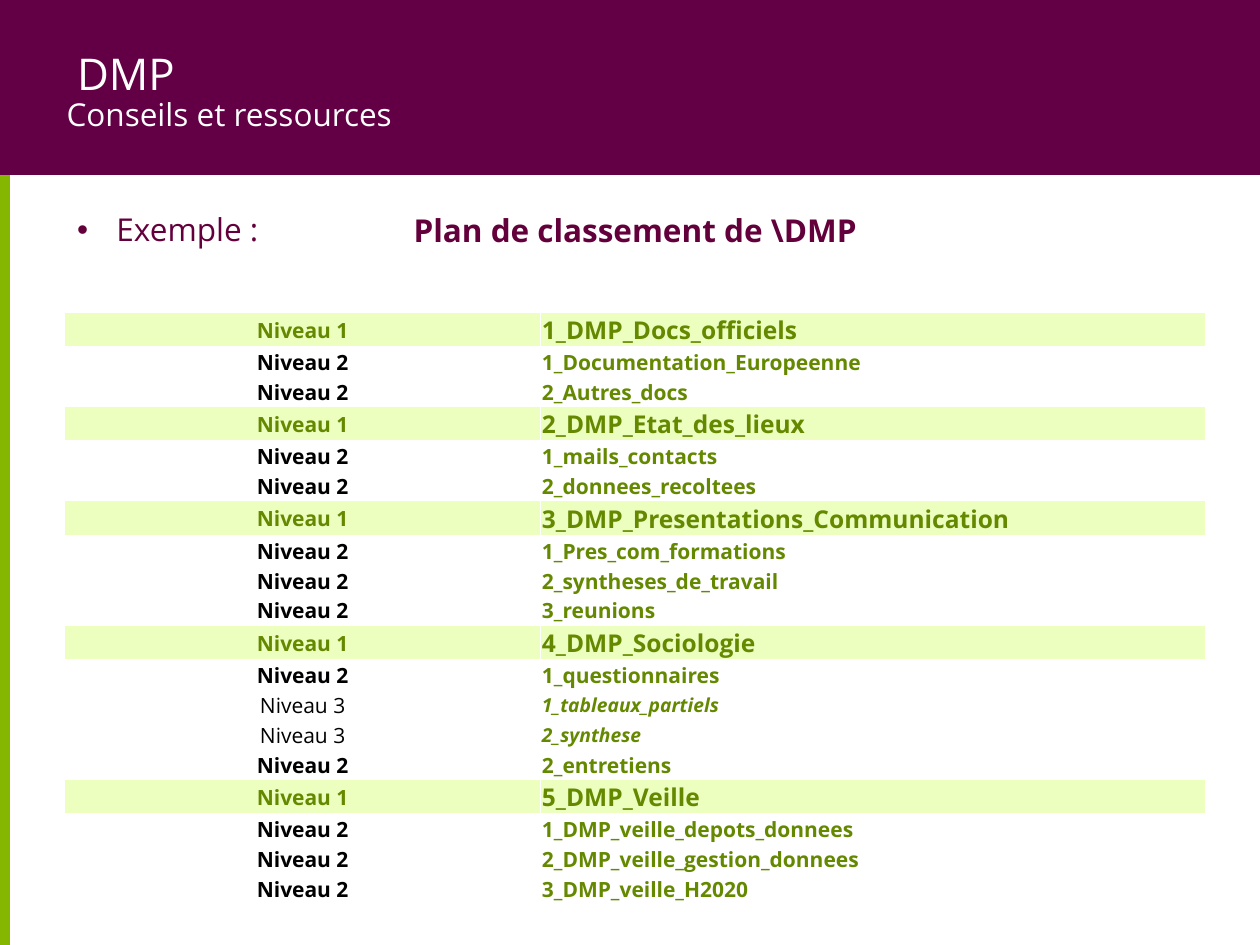
from dataclasses import dataclass

from lxml import etree
from pptx import Presentation
from pptx.dml.color import RGBColor
from pptx.enum.shapes import MSO_CONNECTOR, MSO_SHAPE
from pptx.enum.text import MSO_ANCHOR, MSO_AUTO_SIZE, PP_ALIGN
from pptx.oxml.ns import qn
from pptx.util import Pt

RECTANGLE = MSO_SHAPE.RECTANGLE
STRAIGHT = MSO_CONNECTOR.STRAIGHT
MIDDLE, TOP = MSO_ANCHOR.MIDDLE, MSO_ANCHOR.TOP
LEFT, CENTER = PP_ALIGN.LEFT, PP_ALIGN.CENTER
FIT_SHAPE, FIT_NONE = MSO_AUTO_SIZE.SHAPE_TO_FIT_TEXT, MSO_AUTO_SIZE.NONE


@dataclass(frozen=True)
class Theme:
    font: str = "Open Sans"
    plum: str = "630045"
    plum_text: str = "63003C"
    green: str = "86B700"
    green_text: str = "648900"
    pale_green: str = "EDFFBE"
    white: str = "FFFFFF"
    black: str = "000000"
    title: float = 25
    heading: float = 18
    folder: float = 14
    body: float = 12
    small: float = 11


THEME = Theme()
SLIDE_WIDTH, SLIDE_HEIGHT = 720, 540
BANNER_HEIGHT = 100
TABLE_TOP = 116.64
COLUMN_WIDTHS = (272, 380)
HEADER_HEIGHTS = (28.8, 32.8)
LEVEL_HEIGHTS = {1: 18.72, 2: 15.84, 3: 15.84}
FOLDER_SIZES = {1: THEME.folder, 2: THEME.body, 3: THEME.small}

# Level and name of each folder, in filing order
FOLDERS = [
    (1, "1_DMP_Docs_officiels"),
    (2, "1_Documentation_Europeenne"),
    (2, "2_Autres_docs"),
    (1, "2_DMP_Etat_des_lieux"),
    (2, "1_mails_contacts"),
    (2, "2_donnees_recoltees"),
    (1, "3_DMP_Presentations_Communication"),
    (2, "1_Pres_com_formations"),
    (2, "2_syntheses_de_travail"),
    (2, "3_reunions"),
    (1, "4_DMP_Sociologie"),
    (2, "1_questionnaires"),
    (3, "1_tableaux_partiels"),
    (3, "2_synthese"),
    (2, "2_entretiens"),
    (1, "5_DMP_Veille"),
    (2, "1_DMP_veille_depots_donnees"),
    (2, "2_DMP_veille_gestion_donnees"),
    (2, "3_DMP_veille_H2020"),
]


def rgb(colour):
    return RGBColor.from_string(colour)


def write(frame, text, *, size, colour, bold=False, italic=False,
          align=LEFT, spacing=None, bullet_indent=None):
    paragraph = frame.paragraphs[0]
    if bullet_indent:
        properties = paragraph._p.get_or_add_pPr()
        properties.set("marL", str(Pt(bullet_indent)))
        properties.set("indent", str(-Pt(bullet_indent)))
        etree.SubElement(properties, qn("a:buFont"), typeface="Arial")
        etree.SubElement(properties, qn("a:buChar"), char="•")
    paragraph.alignment = align
    if spacing:
        paragraph.line_spacing = spacing
    run = paragraph.add_run()
    run.text = text
    font = run.font
    font.name, font.size = THEME.font, Pt(size)
    font.bold, font.italic = bold, italic
    font.color.rgb = rgb(colour)


def add_text(slide, text, left, top, width, height, *, anchor=TOP,
             fit=FIT_SHAPE, **text_format):
    box = slide.shapes.add_textbox(Pt(left), Pt(top), Pt(width), Pt(height))
    frame = box.text_frame
    frame.word_wrap = True
    frame.auto_size = fit
    frame.vertical_anchor = anchor
    write(frame, text, **text_format)


def add_banner(slide):
    banner = slide.shapes.add_shape(
        RECTANGLE, 0, 0, Pt(SLIDE_WIDTH), Pt(BANNER_HEIGHT))
    banner.shadow.inherit = False
    banner.fill.solid()
    banner.fill.fore_color.rgb = rgb(THEME.plum)
    banner.line.fill.background()


def add_side_rule(slide, x):
    rule = slide.shapes.add_connector(
        STRAIGHT, Pt(x), Pt(BANNER_HEIGHT), Pt(x), Pt(SLIDE_HEIGHT))
    rule.line.color.rgb = rgb(THEME.green)
    rule.line.width = Pt(6)
    etree.SubElement(rule._element.spPr, qn("a:effectLst"))


def style_cell(cell, fill, bottom_border=1):
    properties = cell._tc.get_or_add_tcPr()
    for side, width in (("L", 1), ("R", 1), ("T", 1), ("B", bottom_border)):
        border = etree.SubElement(
            properties, qn(f"a:ln{side}"), w=str(Pt(width)))
        paint = etree.SubElement(border, qn("a:solidFill"))
        etree.SubElement(paint, qn("a:srgbClr"), val=THEME.white)
    cell.fill.solid()
    cell.fill.fore_color.rgb = rgb(fill)


def fill_cell(cell, text, fill, bottom_border=1, **text_format):
    style_cell(cell, fill, bottom_border)
    cell.margin_left = cell.margin_right = cell.margin_top = Pt(0.72)
    cell.margin_bottom = 0
    cell.vertical_anchor = MIDDLE
    write(cell.text_frame, text, **text_format)


def add_filing_plan(slide):
    heights = [*HEADER_HEIGHTS, *(LEVEL_HEIGHTS[level] for level, _ in FOLDERS)]
    plan = slide.shapes.add_table(
        len(heights), len(COLUMN_WIDTHS), Pt(37), Pt(TABLE_TOP),
        Pt(sum(COLUMN_WIDTHS)), Pt(sum(heights))).table
    plan.first_row = plan.horz_banding = False
    for column, width in zip(plan.columns, COLUMN_WIDTHS):
        column.width = Pt(width)
    for row, height in zip(plan.rows, heights):
        row.height = Pt(height)

    # Heading across both columns, then an empty row
    plan.cell(0, 0).merge(plan.cell(0, 1))
    fill_cell(plan.cell(0, 0), "Plan de classement de \\DMP", THEME.white,
              bottom_border=3, size=THEME.heading, colour=THEME.plum_text,
              bold=True, align=CENTER)
    for column in range(len(COLUMN_WIDTHS)):
        style_cell(plan.cell(1, column), THEME.white)

    # One row per folder
    for row, (level, folder) in enumerate(FOLDERS, start=len(HEADER_HEIGHTS)):
        is_top = level == 1
        fill = THEME.pale_green if is_top else THEME.white
        fill_cell(plan.cell(row, 0), f"Niveau {level}", fill,
                  size=THEME.body, bold=level < 3, align=CENTER,
                  colour=THEME.green_text if is_top else THEME.black)
        fill_cell(plan.cell(row, 1), folder, fill, size=FOLDER_SIZES[level],
                  colour=THEME.green_text, bold=True, italic=level == 3)


def main():
    presentation = Presentation()
    presentation.slide_width = Pt(SLIDE_WIDTH)
    presentation.slide_height = Pt(SLIDE_HEIGHT)
    slide = presentation.slides.add_slide(presentation.slide_layouts[6])

    # Banner with title
    add_banner(slide)
    add_text(slide, "DMP", 37, 21.6, 601, 44, anchor=MIDDLE, fit=FIT_NONE,
             size=THEME.title, colour=THEME.white, spacing=0.9)

    # Filing plan
    add_filing_plan(slide)

    # Subtitle, example label and side rule
    add_text(slide, "Conseils et ressources", 31, 51, 476, 29,
             size=THEME.heading, colour=THEME.white)
    add_text(slide, "Exemple :", 37, TABLE_TOP, 130, 29,
             size=THEME.heading, colour=THEME.plum_text, bullet_indent=22.5)
    add_side_rule(slide, 2.9)

    presentation.save("out.pptx")


if __name__ == "__main__":
    main()
